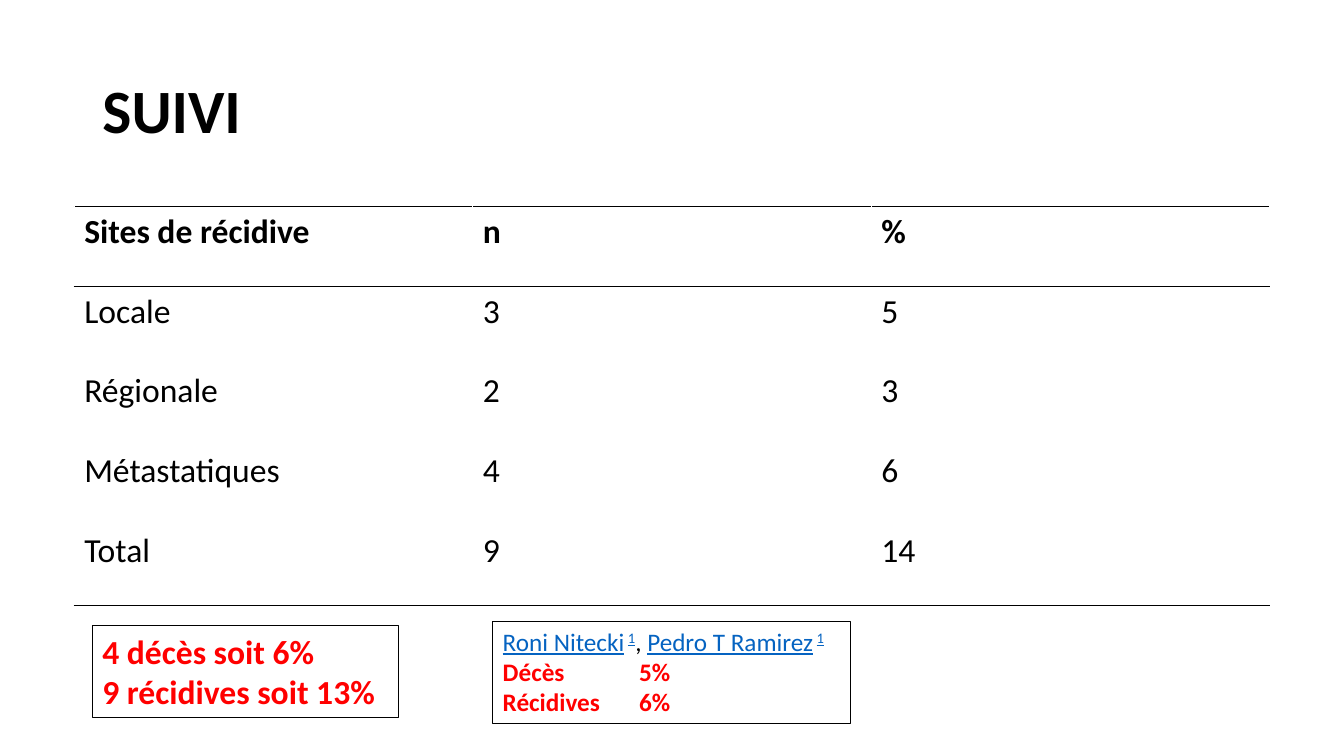
"""Build the follow-up slide with its recurrence table and two summary boxes."""
from dataclasses import dataclass

from lxml.etree import SubElement
from pptx import Presentation
from pptx.dml.color import RGBColor
from pptx.enum.text import MSO_ANCHOR, MSO_AUTO_SIZE, PP_ALIGN
from pptx.oxml.ns import qn
from pptx.util import Pt


@dataclass(frozen=True)
class Theme:
    font: str = "Calibri"
    black: RGBColor = RGBColor(0, 0, 0)
    white: RGBColor = RGBColor(255, 255, 255)
    red: RGBColor = RGBColor(255, 0, 0)
    link: RGBColor = RGBColor(0x05, 0x63, 0xC1)
    title_size: int = 44
    body_size: int = 24
    note_size: int = 18


THEME = Theme()
RECURRENCES = [
    ("Sites de récidive", "n", "%"),
    ("Locale", "3", "5"),
    ("Régionale", "2", "3"),
    ("Métastatiques", "4", "6"),
    ("Total", "9", "14"),
]


def add_run(paragraph, text, size, color=THEME.black, bold=False, underline=False, raised=False):
    run = paragraph.add_run()
    run.text = text
    font = run.font
    font.name, font.size, font.bold, font.underline = THEME.font, Pt(size), bold, underline
    font.color.rgb = color
    if raised:
        run._r.get_or_add_rPr().set("baseline", "30000")


def add_title(slide, text):
    title = slide.shapes.title
    title.left, title.top, title.width, title.height = Pt(66), Pt(28.75), Pt(828), Pt(104.4)
    title.text_frame.vertical_anchor = MSO_ANCHOR.MIDDLE
    paragraph = title.text_frame.paragraphs[0]
    paragraph.alignment = PP_ALIGN.LEFT
    paragraph.line_spacing = 0.9
    add_run(paragraph, text, THEME.title_size, bold=True)


def add_border(cell, side):
    line = SubElement(cell._tc.get_or_add_tcPr(), qn(f"a:ln{side}"), w=str(Pt(1)))
    fill = SubElement(line, qn("a:solidFill"))
    SubElement(fill, qn("a:srgbClr"), val=str(THEME.black))


def add_table(slide, rows):
    frame = slide.shapes.add_table(
        len(rows), len(rows[0]), Pt(53), Pt(147.5), Pt(854.1), Pt(284.75))
    table = frame.table
    table.first_row = table.horz_banding = False
    borders = {0: "TB", 1: "T", len(rows) - 1: "B"}
    for row_index, values in enumerate(rows):
        for column_index, value in enumerate(values):
            cell = table.cell(row_index, column_index)
            for side in borders.get(row_index, ""):
                add_border(cell, side)
            cell.fill.solid()
            cell.fill.fore_color.rgb = THEME.white
            add_run(cell.text_frame.paragraphs[0], value, THEME.body_size, bold=row_index == 0)


def add_box(slide, left, top, width, height, paragraph_count):
    box = slide.shapes.add_textbox(Pt(left), Pt(top), Pt(width), Pt(height))
    box.line.color.rgb = THEME.black
    box.line.width = Pt(0.75)
    frame = box.text_frame
    frame.word_wrap = True
    frame.auto_size = MSO_AUTO_SIZE.SHAPE_TO_FIT_TEXT
    for _ in range(paragraph_count - 1):
        frame.add_paragraph()
    return frame.paragraphs


def add_tab_stop(paragraph, position):
    tabs = SubElement(paragraph._p.get_or_add_pPr(), qn("a:tabLst"))
    SubElement(tabs, qn("a:tab"), pos=str(Pt(position)), algn="l")


def add_results(slide):
    lines = ["4 décès soit 6%", "9 récidives soit 13%"]
    for paragraph, text in zip(add_box(slide, 66, 447, 219, 65.4, len(lines)), lines):
        add_run(paragraph, text, THEME.body_size, THEME.red, bold=True)


def add_reference(slide):
    authors = ["Roni Nitecki", "Pedro T Ramirez"]
    rates = [("Décès", "5%"), ("Récidives", "6%")]
    heading, *lines = add_box(slide, 352, 443.75, 255.5, 72.7, 1 + len(rates))
    for index, author in enumerate(authors):
        if index:
            add_run(heading, ",\u00a0", THEME.note_size)
        add_run(heading, author, THEME.note_size, THEME.link, underline=True)
        add_run(heading, "\u00a0", THEME.note_size, raised=True)
        add_run(heading, "1", THEME.note_size, THEME.link, underline=True, raised=True)
    for paragraph, (label, rate) in zip(lines, rates):
        add_tab_stop(paragraph, 97.5)
        add_run(paragraph, f"{label}\t{rate}", THEME.note_size, THEME.red, bold=True)


def main():
    presentation = Presentation()
    presentation.slide_width, presentation.slide_height = Pt(960), Pt(540)
    slide = presentation.slides.add_slide(presentation.slide_layouts[5])
    add_title(slide, "SUIVI")
    add_table(slide, RECURRENCES)
    add_results(slide)
    add_reference(slide)
    presentation.save("out.pptx")


if __name__ == "__main__":
    main()
